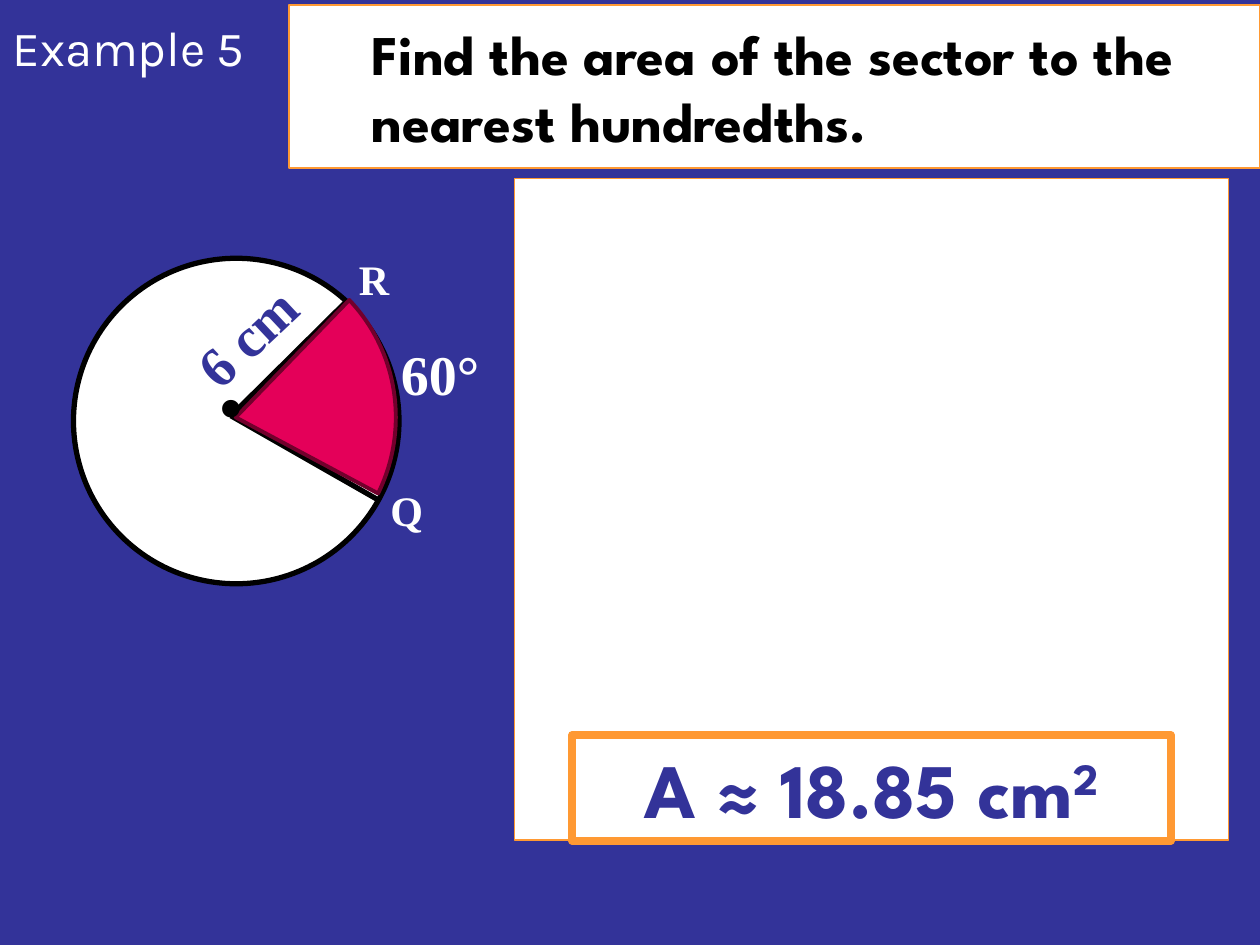
"""Build the slide on finding the area of a circle sector."""
from lxml import etree
from pptx import Presentation
from pptx import util as u
from pptx.dml.color import RGBColor
from pptx.enum import shapes, text
from pptx.oxml.ns import qn

THEME = {
    "blue": "333399", "white": "FFFFFF", "black": "000000",
    "orange": "FF9933", "pink": "E40059", "maroon": "72002C",
    "plain": "Karla", "display": "League Spartan", "serif": "Times New Roman",
    "label": 24, "title": 28, "body": 32, "dot": 42, "answer": 44,
}
COLUMNS, ROWS = 120, 90
WIDTH, HEIGHT = u.Inches(10), u.Inches(7.5)

TITLE = ("Example 5", (0, 0, 51, 9))
QUESTION = ("Find the area of the sector to the nearest hundredths.",
            (27.5, 0.5, 92.5, 15.5))
PANEL = (49, 17, 68, 63)
ANSWER = ("A ≈ 18.85 cm", "2", (54.5, 70, 57, 10.1))
CIRCLE = (7, 24.6, 31, 31)
SECTOR = {"area": (7.2, 23.9, 30.5, 31.7), "degrees": (314.09, 28.14)}
CENTRE = (22, 39.6)
RADIUS_ENDS = [(33, 28.7), (36, 47.6)]
LABELS = [
    ("60°", (37, 31.7, 13, 7.7), "body", "white", 0),
    ("6 cm", (16.1, 26.2, 19, 7.7), "body", "blue", 316.8),
    ("Q", (36, 45.6, 6, 6), "label", "white", 0),
    ("R", (33, 23.6, 6, 6), "label", "white", 0),
]
DOT = ("•", (19.6, 33.7, 5.6, 9.7))


def colour(name):
    return RGBColor.from_string(THEME[name])


def grid(*values):
    """Turn alternating column and row counts into slide lengths."""
    units = (WIDTH / COLUMNS, HEIGHT / ROWS)
    return [u.Emu(round(value * units[i % 2])) for i, value in enumerate(values)]


def set_all(target, **values):
    for name, value in values.items():
        setattr(target, name, value)


def place(shape, area):
    set_all(shape, **dict(zip(("left", "top", "width", "height"), grid(*area))))


def paint(shape, fill, line=None, weight=0):
    shape.fill.solid()
    shape.fill.fore_color.rgb = colour(fill)
    if line:
        shape.line.color.rgb = colour(line)
        shape.line.width = u.Pt(weight)


def add_figure(slide, kind, area, fill, line, weight):
    shape = slide.shapes.add_shape(kind, *grid(*area))
    shape.shadow.inherit = False
    paint(shape, fill, line, weight)
    return shape


def write(box, words, font, size, ink, bold=True, align=text.PP_ALIGN.LEFT,
          anchor=text.MSO_ANCHOR.TOP, before=4, wrap=True):
    set_all(box.text_frame, word_wrap=wrap, vertical_anchor=anchor,
            auto_size=text.MSO_AUTO_SIZE.NONE)
    para = box.text_frame.paragraphs[0]
    set_all(para, alignment=align, space_before=u.Pt(before))
    for word in words:
        span = para.add_run()
        span.text = word
        set_all(span.font, name=THEME[font], size=u.Pt(THEME[size]), bold=bold)
        span.font.color.rgb = colour(ink)
    return para


def add_headings(slide):
    middle = text.MSO_ANCHOR.MIDDLE
    title, question = slide.placeholders
    place(title, TITLE[1])
    paint(title, "blue")
    write(title, TITLE[:1], "plain", "title", "white", bold=False,
          anchor=middle, before=0)
    place(question, QUESTION[1])
    paint(question, "white", "orange", 1)
    write(question, QUESTION[:1], "display", "body", "black", anchor=middle)
    question.text_frame.margin_left = u.Inches(0.66)


def add_answer(slide):
    rectangle = shapes.MSO_SHAPE.RECTANGLE
    add_figure(slide, rectangle, PANEL, "white", "orange", 0.75)
    box = add_figure(slide, rectangle, ANSWER[2], "white", "orange", 4.5)
    para = write(box, ANSWER[:2], "display", "answer", "blue",
                 align=text.PP_ALIGN.CENTER)
    para.runs[1].font._element.set("baseline", "30000")


def add_circle(slide):
    add_figure(slide, shapes.MSO_SHAPE.OVAL, CIRCLE, "white", "black", 3)
    for end in RADIUS_ENDS:
        radius = slide.shapes.add_connector(
            shapes.MSO_CONNECTOR.STRAIGHT, *grid(*CENTRE, *end))
        radius.line.color.rgb = colour("black")
        radius.line.width = u.Pt(3)
        etree.SubElement(radius._element.spPr, qn("a:effectLst"))
    for words, area, size, ink, turn in LABELS:
        box = slide.shapes.add_textbox(*grid(*area))
        box.rotation = turn
        write(box, [words], "serif", size, ink)
    sector = add_figure(slide, shapes.MSO_SHAPE.PIE, SECTOR["area"],
                        "pink", "maroon", 2.25)
    for index, angle in enumerate(SECTOR["degrees"]):
        sector.adjustments[index] = angle * 0.6
    dot = slide.shapes.add_textbox(*grid(*DOT[1]))
    write(dot, DOT[:1], "serif", "dot", "black", bold=False, before=0, wrap=False)


def main():
    deck = Presentation()
    set_all(deck, slide_width=WIDTH, slide_height=HEIGHT)
    page = deck.slides.add_slide(deck.slide_layouts[0])
    page.background.fill.solid()
    page.background.fill.fore_color.rgb = colour("blue")
    add_headings(page)
    add_answer(page)
    add_circle(page)
    deck.save("out.pptx")


if __name__ == "__main__":
    main()
